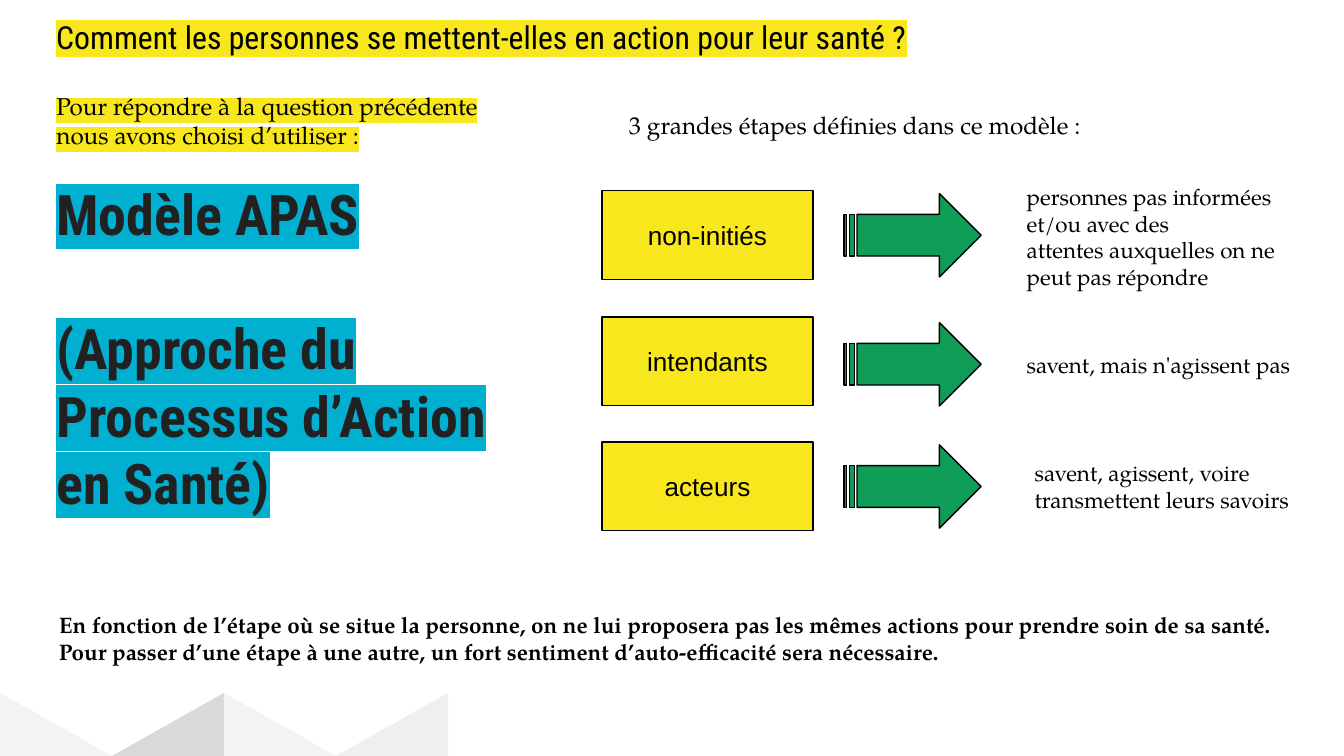
from lxml import etree
from pptx import Presentation
from pptx.dml.color import RGBColor
from pptx.enum.shapes import MSO_SHAPE
from pptx.enum.text import MSO_ANCHOR, MSO_AUTO_SIZE, PP_ALIGN
from pptx.oxml.ns import qn
from pptx.util import Inches, Pt

RECTANGLE = MSO_SHAPE.RECTANGLE
ARROW = MSO_SHAPE.STRIPED_RIGHT_ARROW
TRIANGLE = MSO_SHAPE.RIGHT_TRIANGLE
TOP, MIDDLE = MSO_ANCHOR.TOP, MSO_ANCHOR.MIDDLE
LEFT, CENTER = PP_ALIGN.LEFT, PP_ALIGN.CENTER
NO_AUTOFIT = MSO_AUTO_SIZE.NONE

SLIDE_WIDTH = 10
SLIDE_HEIGHT = SLIDE_WIDTH * 9 / 16
COLORS = {
    "black": "000000",
    "dark": "212121",
    "yellow": "F8E71C",
    "blue": "01AFD1",
    "green": "0F9D58",
    "pale": "F3F3F3",
    "light": "EFEFEF",
    "gray": "D9D9D9",
}
SERIF, CONDENSED, SANS = "TeX Gyre Pagella", "Roboto Condensed", "Arial"


def rgb(name):
    return RGBColor.from_string(COLORS[name])


def write(paragraph, text, font=SERIF, size=12, color="black", bold=False,
          highlight=None, align=LEFT, before=0):
    paragraph.alignment = align
    paragraph.space_before = Pt(before)
    run = paragraph.add_run()
    run.text = text
    run.font.size = Pt(size)
    run.font.bold = bold
    run.font.color.rgb = rgb(color)
    run.font.name = font
    if highlight:
        mark = etree.Element(qn("a:highlight"))
        etree.SubElement(mark, qn("a:srgbClr"), val=COLORS[highlight])
        run.font._element.find(qn("a:solidFill")).addnext(mark)


class SlideBuilder:
    def __init__(self, slide):
        self.slide = slide
        self.margin = Inches(0.1)

    def fill_text(self, shape, entries, anchor=TOP):
        frame = shape.text_frame
        frame.word_wrap = True
        frame.auto_size = NO_AUTOFIT
        frame.vertical_anchor = anchor
        frame.margin_left = frame.margin_right = self.margin
        frame.margin_top = frame.margin_bottom = self.margin
        for index, (text, style) in enumerate(entries):
            paragraph = frame.add_paragraph() if index else frame.paragraphs[0]
            write(paragraph, text, **style)

    def title(self, box, entries):
        shape = self.slide.shapes.title
        shape.left, shape.top, shape.width, shape.height = map(Inches, box)
        self.fill_text(shape, entries)

    def text(self, box, *lines, **style):
        shape = self.slide.shapes.add_textbox(*map(Inches, box))
        self.fill_text(shape, [(line, style) for line in lines])

    def shape(self, kind, box, fill, outlined=True, rotation=0):
        shape = self.slide.shapes.add_shape(kind, *map(Inches, box))
        shape.shadow.inherit = False
        shape.rotation = rotation
        shape.fill.solid()
        shape.fill.fore_color.rgb = rgb(fill)
        if outlined:
            shape.line.color.rgb = rgb("black")
            shape.line.width = Pt(0.75)
        else:
            shape.line.fill.background()
        return shape

    def stage(self, box, label):
        shape = self.shape(RECTANGLE, box, "yellow")
        self.fill_text(shape, [(label, {"font": SANS, "size": 14, "align": CENTER})], MIDDLE)

    def zigzag(self):
        width, height = SLIDE_WIDTH / 12, 0.47
        top = SLIDE_HEIGHT - height
        for index, color in enumerate(("pale", "gray", "pale", "light")):
            left = index * width
            if index % 2:
                center_x, center_y = left + width / 2, top + height / 2
                box = (center_x - height / 2, center_y - width / 2, height, width)
                self.shape(TRIANGLE, box, color, outlined=False, rotation=270)
            else:
                self.shape(TRIANGLE, (left, top, width, height), color, outlined=False)


def main():
    presentation = Presentation()
    presentation.slide_width = Inches(SLIDE_WIDTH)
    presentation.slide_height = Inches(SLIDE_HEIGHT)
    builder = SlideBuilder(presentation.slides.add_slide(presentation.slide_layouts[5]))

    builder.zigzag()
    model = {"font": CONDENSED, "size": 30, "color": "dark", "bold": True, "highlight": "blue"}
    builder.title((0.32, 0.58, 3.59, 4.46), [
        ("Pour répondre à la question précédente nous avons choisi d’utiliser :",
         {"size": 13, "highlight": "yellow"}),
        ("Modèle APAS", {**model, "before": 16}),
        ("(Approche du Processus d’Action en Santé)", {**model, "before": 36}),
    ])

    builder.text((0.32, 0.03, 9.36, 0.49),
                 "Comment les personnes se mettent-elles en action pour leur santé ?",
                 font=CONDENSED, size=17, highlight="yellow")
    builder.text((4.58, 0.72, 5.12, 0.42),
                 "3 grandes étapes définies dans ce modèle :", size=13)

    stages = [
        ("non-initiés", 1.42, 1.44, (7.54, 1.26, 2.21, 1.01),
         ("personnes pas informées et/ou avec des",
          "attentes auxquelles on ne peut pas répondre")),
        ("intendants", 2.36, 2.4, (7.54, 2.51, 2.21, 0.4),
         ("savent, mais n'agissent pas",)),
        ("acteurs", 3.29, 3.31, (7.6, 3.32, 2.21, 0.6),
         ("savent, agissent, voire transmettent leurs savoirs",)),
    ]
    for label, stage_top, arrow_top, description_box, description in stages:
        builder.stage((4.48, stage_top, 1.57, 0.66), label)
        builder.shape(ARROW, (6.28, arrow_top, 1.02, 0.62), "green")
        builder.text(description_box, *description)

    builder.text((0.34, 4.45, 9.36, 0.61),
                 "En fonction de l’étape où se situe la personne, on ne lui proposera pas "
                 "les mêmes actions pour prendre soin de sa santé.",
                 "Pour passer d’une étape à une autre, un fort sentiment "
                 "d’auto-efficacité sera nécessaire.",
                 bold=True)
    presentation.save("out.pptx")


if __name__ == "__main__":
    main()
